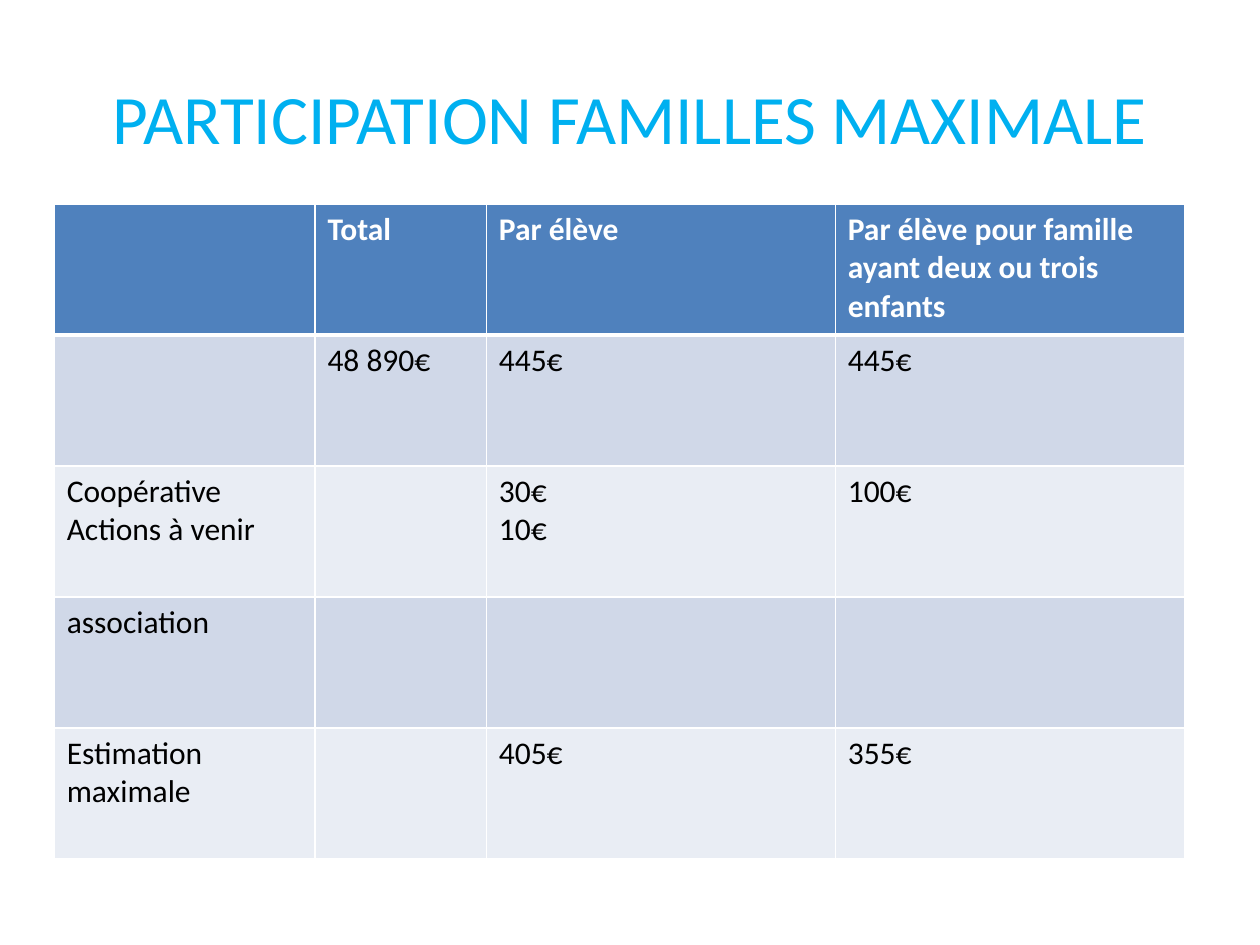
"""Build the slide on the maximum family contribution."""
from dataclasses import dataclass

from lxml.etree import SubElement
from pptx import Presentation
from pptx.dml.color import RGBColor
from pptx.enum.text import MSO_ANCHOR as Anchor, PP_ALIGN as Align
from pptx.oxml.ns import qn
from pptx.util import Inches, Pt

COLORS = {
    "title": "00B0F0",
    "header": "4F81BD",
    "odd": "D0D8E8",
    "even": "E9EDF4",
    "light": "FFFFFF",
    "dark": "000000",
}
FONT = "Calibri"
COLUMN_WIDTHS = (2.07, 1.36, 2.77, 2.77)
ROW_HEIGHT = 1.04


@dataclass(frozen=True)
class TableRow:
    label: str = ""
    total: str = ""
    per_pupil: str = ""
    per_sibling: str = ""

    def texts(self) -> tuple[str, ...]:
        return self.label, self.total, self.per_pupil, self.per_sibling


@dataclass(frozen=True)
class CellStyle:
    fill: str
    text: str = "dark"
    bold: bool = False
    bottom: float = 1


HEADER_STYLE = CellStyle("header", "light", True, 3)
BODY_STYLES = (CellStyle("even"), CellStyle("odd"))

ROWS = (
    TableRow("", "Total", "Par élève", "Par élève pour famille ayant deux ou trois enfants"),
    TableRow("", "48 890€", "445€", "445€"),
    TableRow("Coopérative\nActions à venir", "", "30€\n10€", "100€"),
    TableRow("association"),
    TableRow("Estimation maximale", "", "405€", "355€"),
)


def color(name: str) -> RGBColor:
    return RGBColor.from_string(COLORS[name])


def add_run(paragraph, text: str, size: float, color_name: str, bold: bool = False) -> None:
    run = paragraph.add_run()
    run.text = text
    run.font.name = FONT
    run.font.size = Pt(size)
    run.font.bold = bold
    run.font.color.rgb = color(color_name)


def set_borders(cell, top: float, bottom: float) -> None:
    properties = cell._tc.get_or_add_tcPr()
    for side, width in (("L", 1), ("R", 1), ("T", top), ("B", bottom)):
        line = SubElement(properties, qn(f"a:ln{side}"), w=str(Pt(width)))
        fill = SubElement(line, qn("a:solidFill"))
        SubElement(fill, qn("a:srgbClr"), val=COLORS["light"])


def fill_cell(cell, text: str, style: CellStyle, top: float) -> None:
    set_borders(cell, top, style.bottom)
    cell.fill.solid()
    cell.fill.fore_color.rgb = color(style.fill)
    frame = cell.text_frame
    for index, line in enumerate(text.splitlines()):
        paragraph = frame.add_paragraph() if index else frame.paragraphs[0]
        add_run(paragraph, line, 18, style.text, style.bold)


def add_title(slide, text: str) -> None:
    title = slide.shapes.title
    title.left, title.top = Inches(0.5), Inches(0.3)
    title.width, title.height = Inches(9), Inches(1.25)
    frame = title.text_frame
    frame.word_wrap = True
    frame.vertical_anchor = Anchor.MIDDLE
    paragraph = frame.paragraphs[0]
    paragraph.alignment = Align.CENTER
    add_run(paragraph, text, 39.6, "title")


def add_contribution_table(slide) -> None:
    shape = slide.shapes.add_table(
        len(ROWS), len(COLUMN_WIDTHS), Inches(0.43), Inches(1.62),
        Inches(sum(COLUMN_WIDTHS)), Inches(ROW_HEIGHT * len(ROWS)),
    )
    table = shape.table
    for column, width in zip(table.columns, COLUMN_WIDTHS):
        column.width = Inches(width)
    top = 1
    for index, (row, content) in enumerate(zip(table.rows, ROWS)):
        row.height = Inches(ROW_HEIGHT)
        style = BODY_STYLES[index % 2] if index else HEADER_STYLE
        for cell, text in zip(row.cells, content.texts()):
            fill_cell(cell, text, style, top)
        top = style.bottom


def main() -> None:
    presentation = Presentation()
    presentation.slide_width, presentation.slide_height = Inches(10), Inches(7.5)
    slide = presentation.slides.add_slide(presentation.slide_layouts[5])
    add_title(slide, "PARTICIPATION FAMILLES MAXIMALE")
    add_contribution_table(slide)
    presentation.save("out.pptx")


if __name__ == "__main__":
    main()
